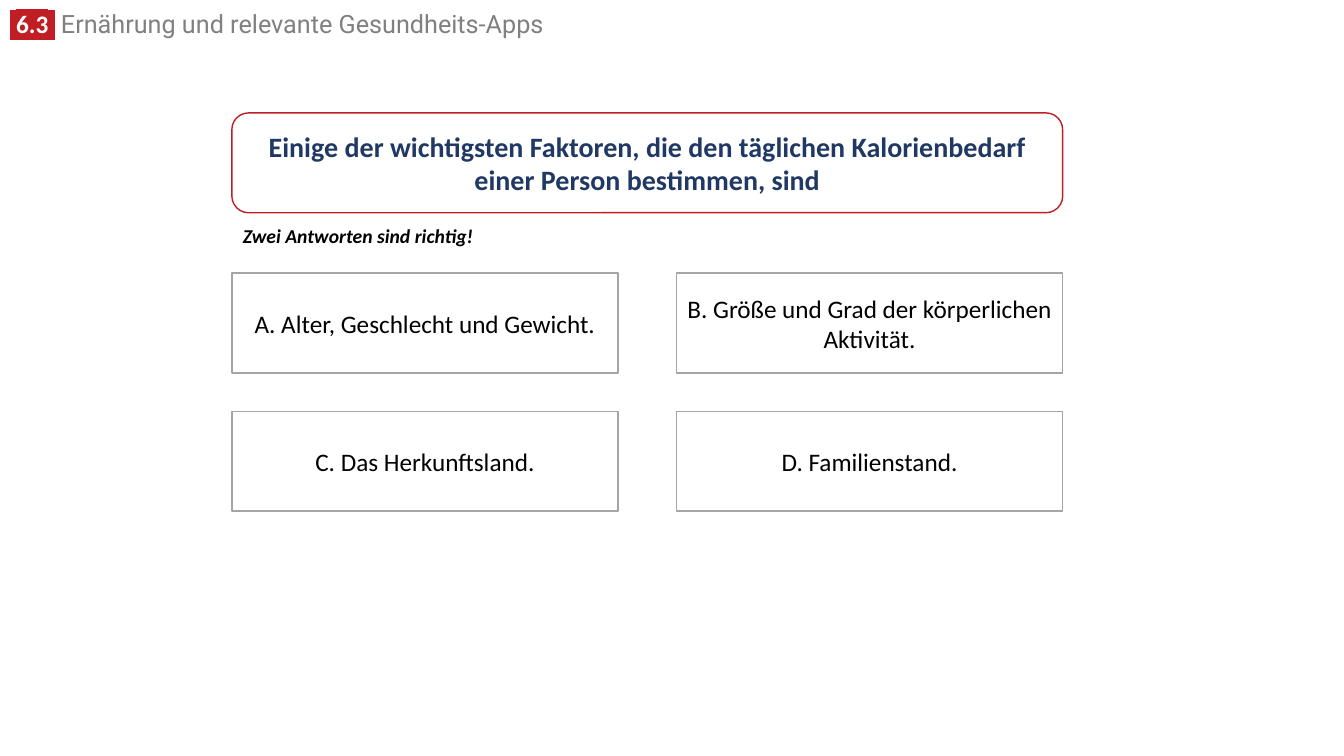
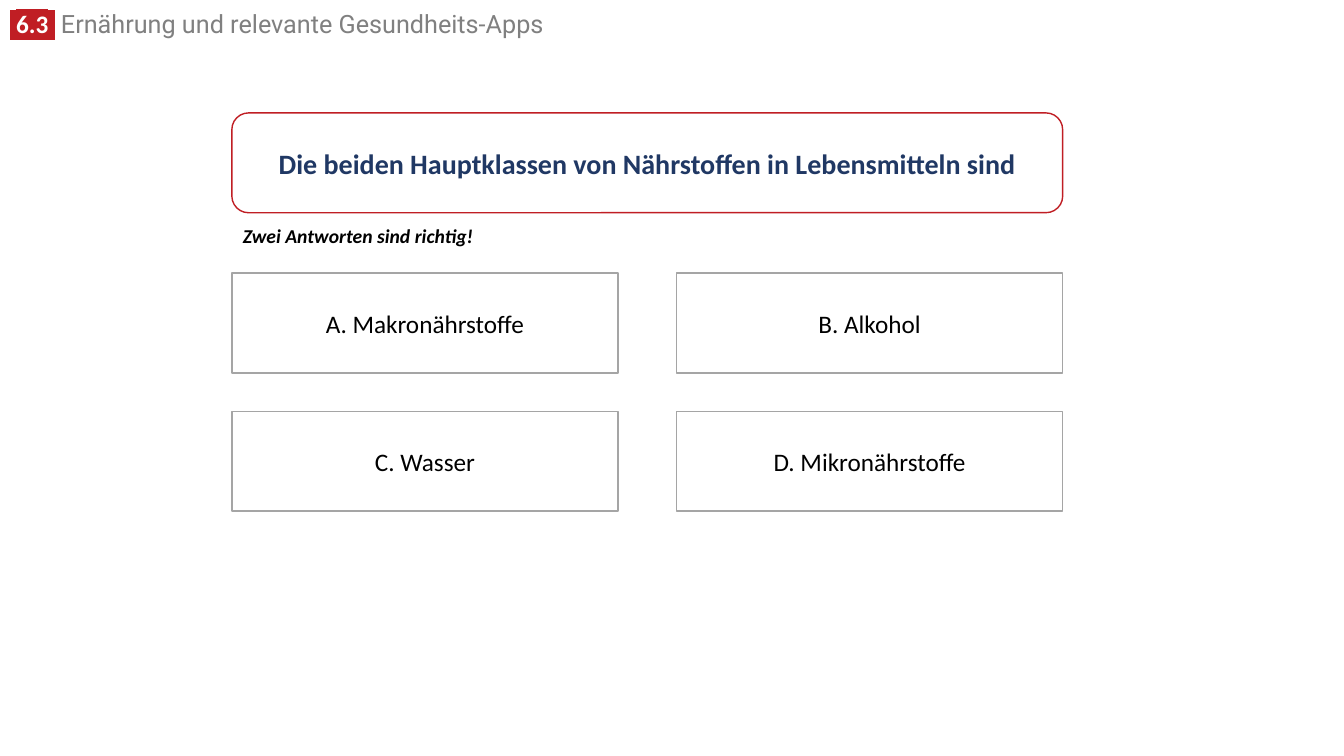
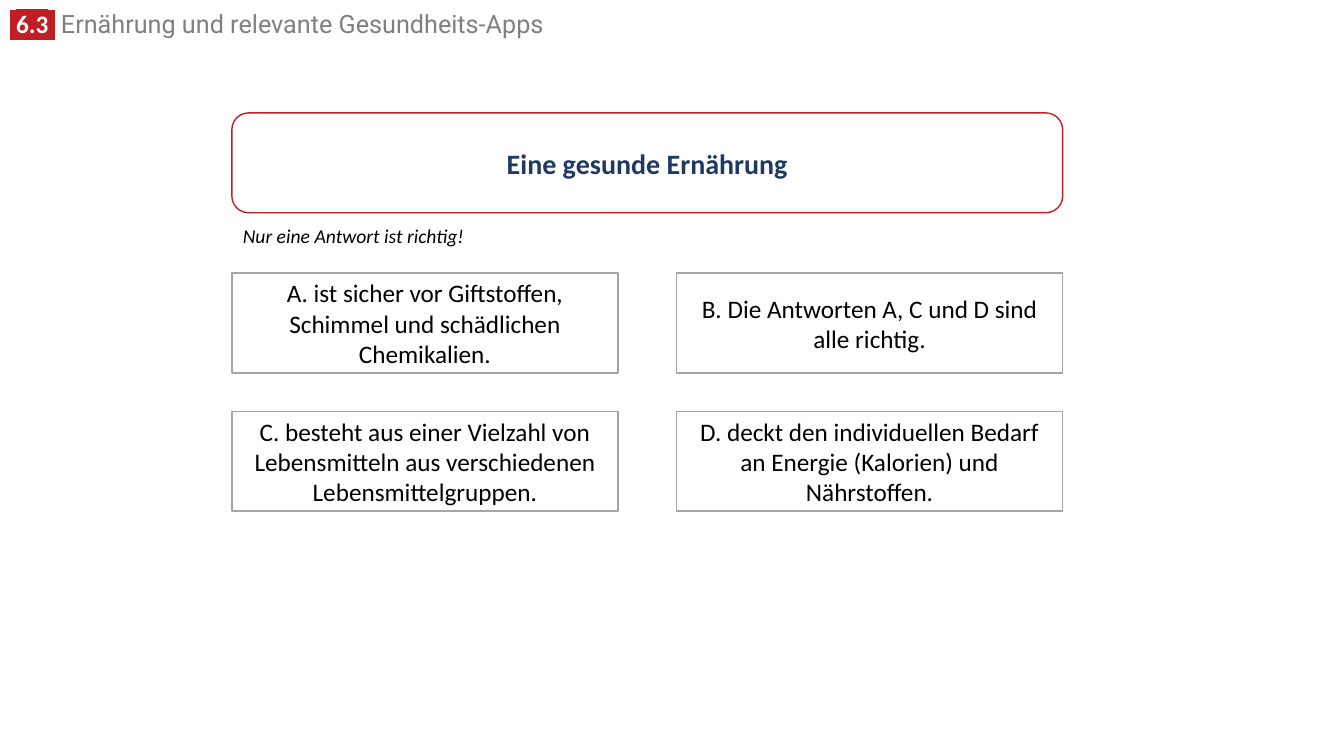
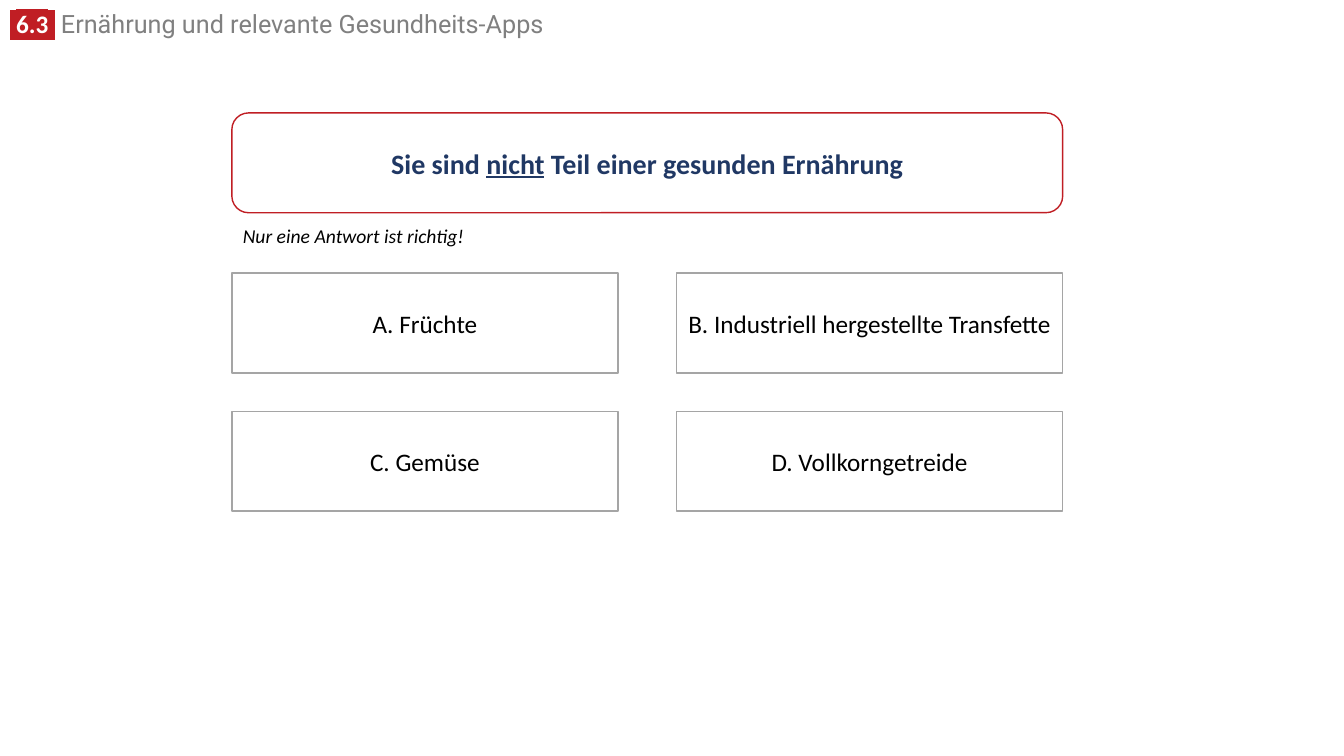
"""Build four quiz slides on nutrition and health apps."""

import dataclasses

import lxml.etree
import pptx
import pptx.dml.color
import pptx.enum.shapes
import pptx.enum.text
import pptx.oxml.ns
import pptx.presentation
import pptx.shapes.autoshape
import pptx.slide
import pptx.text.text
import pptx.util

Inches = pptx.util.Inches
Align = pptx.enum.text.PP_ALIGN
Kind = pptx.enum.shapes.MSO_SHAPE


@dataclasses.dataclass(frozen=True)
class Style:
    size: int
    ink: str
    face: str = "Calibri"
    bold: bool = False
    slant: bool = False
    under: bool = False


@dataclasses.dataclass(frozen=True)
class Theme:
    red: str = "C01E24"
    white: str = "FFFFFF"
    edge: str = "A5A5A5"
    tag: Style = Style(18, "FFFFFF", bold=True)
    pad: Style = Style(18, "FFFFFF", "Roboto", bold=True)
    head: Style = Style(18, "808080", "Roboto")
    ask: Style = Style(20, "203864", bold=True)
    stress: Style = Style(20, "203864", bold=True, under=True)
    reply: Style = Style(18, "000000")
    one: Style = Style(14, "000000", slant=True)
    two: Style = Style(14, "000000", bold=True, slant=True)


THEME = Theme()


@dataclasses.dataclass(frozen=True)
class Span:
    text: str
    style: Style


@dataclasses.dataclass(frozen=True)
class Box:
    left: float
    top: float
    width: float
    height: float

    def place(self) -> tuple[pptx.util.Length, ...]:
        return tuple(Inches(n) for n in dataclasses.astuple(self))


@dataclasses.dataclass(frozen=True)
class Hint:
    span: Span
    width: float


@dataclasses.dataclass(frozen=True)
class Quiz:
    ask: tuple[Span, ...]
    hint: Hint
    replies: tuple[str, str, str, str]


LEFT, TOP, WIDTH, HEIGHT = 2.3, 2.71, 3.83, 0.99
STEP_X, STEP_Y = 4.41, 1.37
HEAD = Box(0, 0.09, 9.52, 0.35)
ASK = Box(LEFT, 1.12, STEP_X + WIDTH, HEIGHT)
ONE = Hint(Span("Nur eine Antwort ist richtig!", THEME.one), 2.42)
TWO = Hint(Span("Zwei Antworten sind richtig!", THEME.two), 2.5)
TAG = (Span(" ", THEME.pad), Span("6.3", THEME.tag), Span(" ", THEME.pad))
TITLE = Span(" Ernährung und relevante Gesundheits-Apps", THEME.head)

QUIZZES = (
    Quiz(
        (Span("Einige der wichtigsten Faktoren, die den täglichen Kalorienbedarf "
              "einer Person bestimmen, sind", THEME.ask),),
        TWO,
        ("A. Alter, Geschlecht und Gewicht.",
         "B. Größe und Grad der körperlichen Aktivität.",
         "C. Das Herkunftsland.",
         "D. Familienstand."),
    ),
    Quiz(
        (Span("Die beiden Hauptklassen von Nährstoffen in Lebensmitteln sind",
              THEME.ask),),
        TWO,
        ("A. Makronährstoffe", "B. Alkohol", "C. Wasser", "D. Mikronährstoffe"),
    ),
    Quiz(
        (Span("Eine gesunde Ernährung", THEME.ask),),
        ONE,
        ("A. ist sicher vor Giftstoffen, Schimmel und schädlichen Chemikalien.",
         "B. Die Antworten A, C und D sind alle richtig.",
         "C. besteht aus einer Vielzahl von Lebensmitteln aus verschiedenen "
         "Lebensmittelgruppen.",
         "D. deckt den individuellen Bedarf an Energie (Kalorien) und "
         "Nährstoffen."),
    ),
    Quiz(
        (Span("Sie sind ", THEME.ask), Span("nicht", THEME.stress),
         Span(" Teil einer gesunden Ernährung", THEME.ask)),
        ONE,
        ("A. Früchte", "B. Industriell hergestellte Transfette",
         "C. Gemüse", "D. Vollkorngetreide"),
    ),
)


def paint(code: str) -> pptx.dml.color.RGBColor:
    return pptx.dml.color.RGBColor.from_string(code)


def write(para: pptx.text.text._Paragraph, spans: tuple[Span, ...]) -> None:
    for span in spans:
        run = para.add_run()
        run.text = span.text
        font, style = run.font, span.style
        font.size = pptx.util.Pt(style.size)
        font.name = style.face
        font.color.rgb = paint(style.ink)
        font.bold = style.bold
        font.italic = style.slant
        font.underline = style.under


def add_text(slide: pptx.slide.Slide, box: Box, spans: tuple[Span, ...],
             wrap: bool) -> pptx.shapes.autoshape.Shape:
    shape = slide.shapes.add_textbox(*box.place())
    frame = shape.text_frame
    frame.word_wrap = wrap
    frame.auto_size = pptx.enum.text.MSO_AUTO_SIZE.SHAPE_TO_FIT_TEXT
    write(frame.paragraphs[0], spans)
    return shape


def add_card(slide: pptx.slide.Slide, kind: Kind, box: Box, edge: str,
             spans: tuple[Span, ...]) -> None:
    card = slide.shapes.add_shape(kind, *box.place())
    card.shadow.inherit = False
    card.fill.solid()
    card.fill.fore_color.rgb = paint(THEME.white)
    card.line.color.rgb = paint(edge)
    card.line.width = pptx.util.Pt(1)
    frame = card.text_frame
    frame.word_wrap = True
    frame.vertical_anchor = pptx.enum.text.MSO_ANCHOR.MIDDLE
    para = frame.paragraphs[0]
    para.alignment = Align.CENTER
    write(para, spans)


def mark(shape: pptx.shapes.autoshape.Shape, count: int, code: str) -> None:
    name = pptx.oxml.ns.qn
    for prop in list(shape.element.iter(name("a:rPr")))[:count]:
        light = lxml.etree.SubElement(prop, name("a:highlight"))
        lxml.etree.SubElement(light, name("a:srgbClr")).set("val", code)
        prop.find(name("a:solidFill")).addnext(light)


def set_head(slide: pptx.slide.Slide) -> None:
    shapes = slide.slide_layout.shapes
    for holder in list(slide.slide_layout.placeholders):
        shapes.element.remove(holder.element)
    head = add_text(slide, HEAD, (*TAG, TITLE), True)
    head.text_frame.paragraphs[0].line_spacing = 0.8
    mark(head, len(TAG), THEME.red)
    shapes.element.append(head.element)


def add_quiz(slide: pptx.slide.Slide, quiz: Quiz) -> None:
    add_card(slide, Kind.ROUNDED_RECTANGLE, ASK, THEME.red, quiz.ask)
    add_text(slide, Box(2.31, 2.17, quiz.hint.width, 0.34),
             (quiz.hint.span,), False)
    for spot, reply in enumerate(quiz.replies):
        row, col = divmod(spot, 2)
        box = Box(LEFT + col * STEP_X, TOP + row * STEP_Y, WIDTH, HEIGHT)
        add_card(slide, Kind.RECTANGLE, box, THEME.edge,
                 (Span(reply, THEME.reply),))


def main() -> None:
    deck = pptx.Presentation()
    deck.slide_width, deck.slide_height = Inches(13.33), Inches(7.5)
    blank = deck.slide_layouts[6]
    slides = [deck.slides.add_slide(blank) for _ in QUIZZES]
    set_head(slides[0])
    for slide, quiz in zip(slides, QUIZZES):
        add_quiz(slide, quiz)
    deck.save("out.pptx")


if __name__ == "__main__":
    main()
